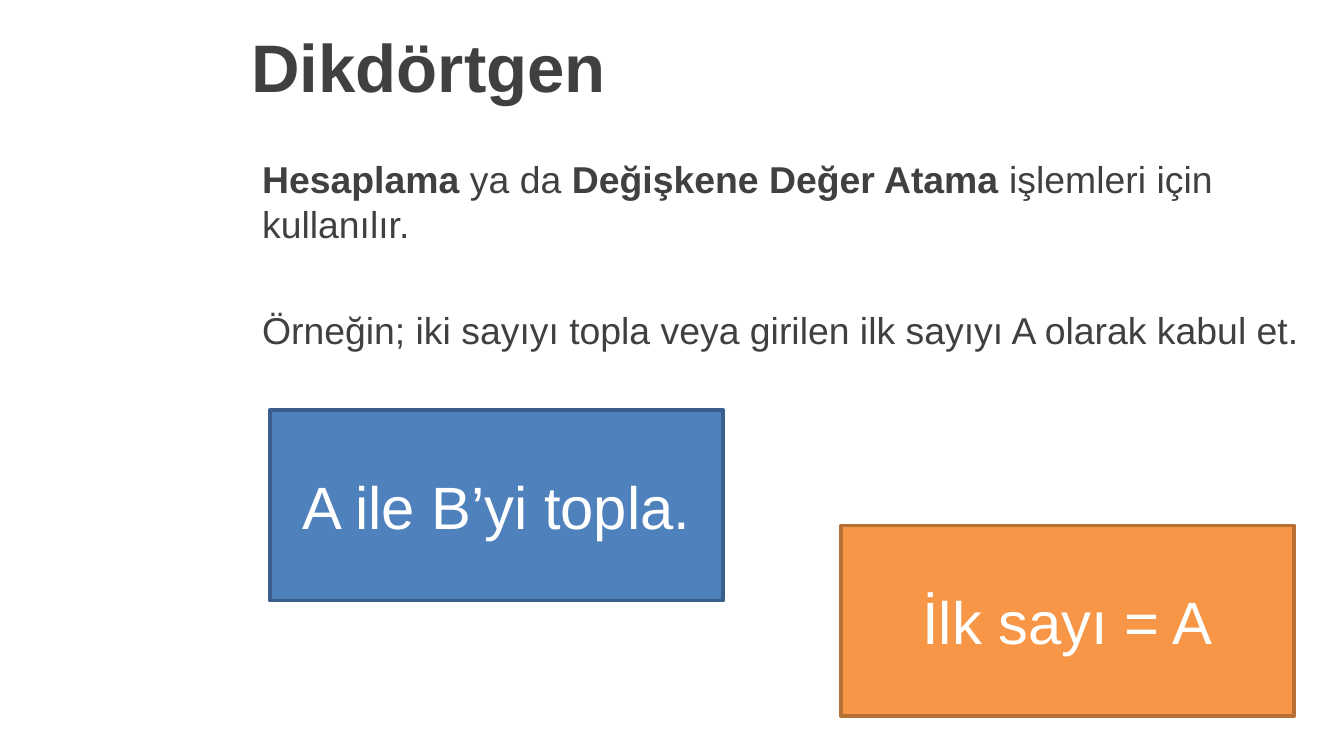
from lxml import etree
from pptx import Presentation
from pptx.dml.color import RGBColor
from pptx.enum.shapes import MSO_SHAPE
from pptx.enum.text import MSO_ANCHOR, MSO_AUTO_SIZE, PP_ALIGN
from pptx.oxml.ns import qn
from pptx.util import Pt

RECTANGLE = MSO_SHAPE.RECTANGLE
MIDDLE = MSO_ANCHOR.MIDDLE
NO_FIT = MSO_AUTO_SIZE.NONE
LEFT, CENTER = PP_ALIGN.LEFT, PP_ALIGN.CENTER

FONT = "Arial"
COLORS = {
    "background": "FFFFFF",
    "text": "404040",
    "box_text": "FFFFFF",
    "blue": "4F81BD",
    "blue_edge": "3A5F8C",
    "orange": "F79646",
    "orange_edge": "B76F34",
}

TITLE = "Dikdörtgen"
EXPLANATION = [
    [
        [("Hesaplama", True), (" ya da ", False),
         ("Değişkene Değer Atama", True), (" işlemleri için ", False)],
        [("kullanılır.", False)],
    ],
    [
        [("Örneğin; iki sayıyı topla veya girilen ilk sayıyı A olarak kabul et.", False)],
    ],
]
EXAMPLES = [
    ("A ile B’yi topla.", 144.7, 219.6, "blue"),
    ("İlk sayı = A", 450.7, 281.5, "orange"),
]
BOX_WIDTH, BOX_HEIGHT = 242.6, 102.2
PARAGRAPH_GAP = 33


def color(name):
    return RGBColor.from_string(COLORS[name])


def place(shape, left, top, width, height):
    shape.left, shape.top = Pt(left), Pt(top)
    shape.width, shape.height = Pt(width), Pt(height)
    frame = shape.text_frame
    frame.auto_size = NO_FIT
    frame.word_wrap = True
    frame.vertical_anchor = MIDDLE
    return frame


def add_run(paragraph, words, size, color_name, bold=False):
    run = paragraph.add_run()
    run.text = words
    run.font.name = FONT
    run.font.size = Pt(size)
    run.font.bold = bold
    run.font.color.rgb = color(color_name)


def remove_bullet(paragraph):
    properties = paragraph._p.get_or_add_pPr()
    properties.set("marL", "0")
    properties.set("indent", "0")
    etree.SubElement(properties, qn("a:buNone"))


presentation = Presentation()
presentation.slide_width, presentation.slide_height = Pt(720), Pt(405)
slide = presentation.slides.add_slide(presentation.slide_layouts[1])
slide.background.fill.solid()
slide.background.fill.fore_color.rgb = color("background")
title, body = slide.placeholders

heading = place(title, 127.5, 0, 592.5, 70).paragraphs[0]
heading.alignment = LEFT
add_run(heading, TITLE, 36, "text", True)

body_frame = place(body, 133.2, 79.8, 578.2, 113)
for index, lines in enumerate(EXPLANATION):
    paragraph = body_frame.add_paragraph() if index else body_frame.paragraphs[0]
    remove_bullet(paragraph)
    paragraph.alignment = LEFT
    paragraph.space_before = Pt(PARAGRAPH_GAP if index else 0)
    for line_index, line in enumerate(lines):
        if line_index:
            paragraph.add_line_break()
        for words, bold in line:
            add_run(paragraph, words, 20, "text", bold)

for label, left, top, hue in EXAMPLES:
    box = slide.shapes.add_shape(RECTANGLE, 0, 0, 0, 0)
    box.shadow.inherit = False
    box.fill.solid()
    box.fill.fore_color.rgb = color(hue)
    box.line.color.rgb = color(hue + "_edge")
    box.line.width = Pt(2)
    caption = place(box, left, top, BOX_WIDTH, BOX_HEIGHT).paragraphs[0]
    caption.alignment = CENTER
    add_run(caption, label, 32, "box_text")

presentation.save("out.pptx")
